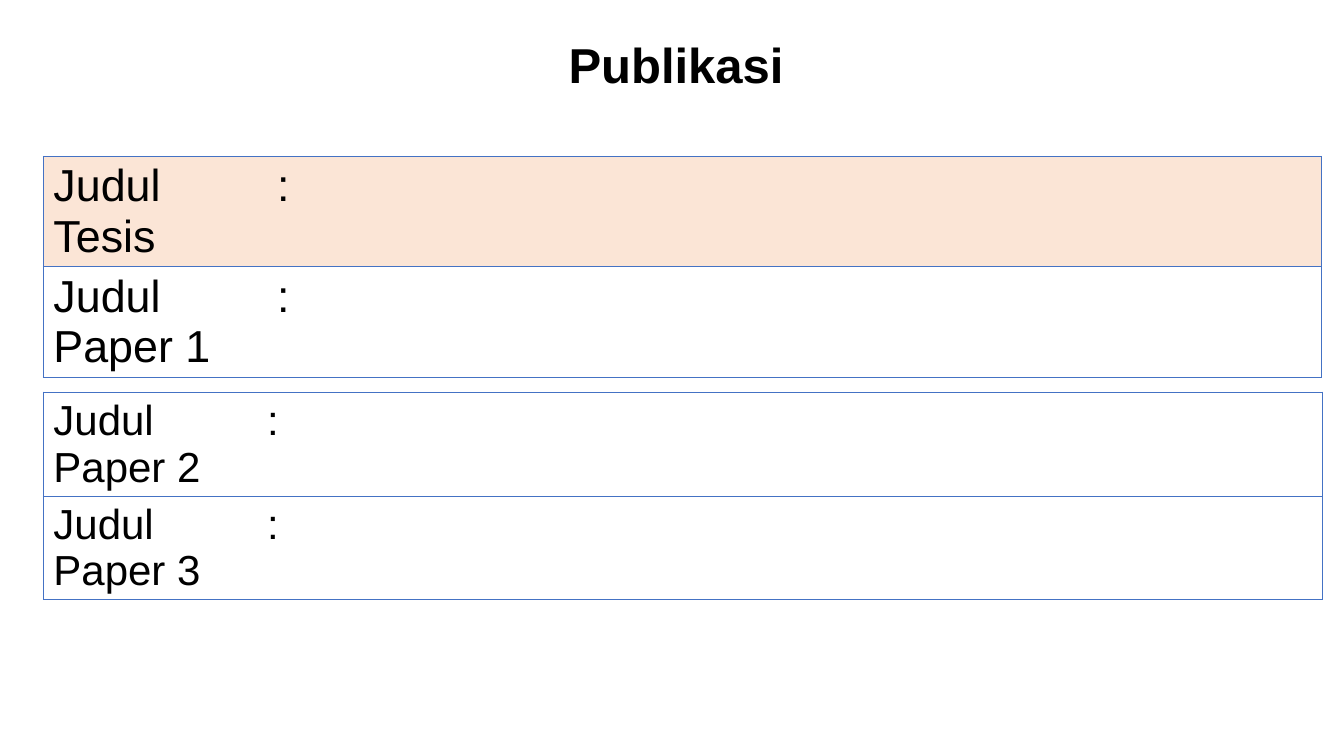
from lxml import etree
from pptx import Presentation
from pptx.dml.color import RGBColor
from pptx.enum import text
from pptx.oxml import ns
from pptx.util import Inches, Pt

FONT = "Arial"
INK, EDGE, WHITE, PEACH = "000000", "4472C4", "FFFFFF", "FBE5D6"
TITLE = "Publikasi "
LEFT = 0.43
TABLES = [
    dict(top=3.89, cols=[2.12, 0.33, 10.24], size=30, fill=WHITE,
         rows=["Judul Paper 2", "Judul Paper 3"]),
    dict(top=1.55, cols=[2.22, 0.25, 10.21], size=32, fill=PEACH,
         rows=["Judul Tesis", "Judul Paper 1"]),
]
ROW = 0.41


def rgb(code):
    return RGBColor.from_string(code)


def style(para, size, bold=False):
    font = para.font
    font.name, font.size, font.bold = FONT, Pt(size), bold
    font.color.rgb = rgb(INK)


def border(cell, sides):
    props = cell._tc.get_or_add_tcPr()
    for side in "LRTB":
        line = etree.SubElement(props, ns.qn(f"a:ln{side}"), w=str(Pt(0.75)))
        if side in sides:
            fill = etree.SubElement(line, ns.qn("a:solidFill"))
            etree.SubElement(fill, ns.qn("a:srgbClr"), val=EDGE)
        else:
            etree.SubElement(line, ns.qn("a:noFill"))


def add_list(slide, top, cols, size, fill, rows):
    frame = slide.shapes.add_table(
        len(rows), len(cols), Inches(LEFT), Inches(top),
        Inches(sum(cols)), Inches(ROW * len(rows)))
    table = frame.table
    table.first_row = table.horz_banding = False
    for col, width in zip(table.columns, cols):
        col.width = Inches(width)
    for r, label in enumerate(rows):
        for c, words in enumerate([label, ":", ""]):
            cell = table.cell(r, c)
            border(cell, "TB" + {0: "L", 2: "R"}.get(c, ""))
            if r == 0:
                cell.fill.solid()
                cell.fill.fore_color.rgb = rgb(fill)
            else:
                cell.fill.background()
            if words:
                cell.text = words
                style(cell.text_frame.paragraphs[0], size)


def main():
    deck = Presentation()
    deck.slide_width, deck.slide_height = Inches(13.33), Inches(7.5)
    slide = deck.slides.add_slide(deck.slide_layouts[5])
    title = slide.shapes.title
    title.left, title.top = Inches(2), Inches(0.32)
    title.width, title.height = Inches(9.55), Inches(0.82)
    frame = title.text_frame
    frame.text = TITLE
    frame.vertical_anchor = text.MSO_ANCHOR.TOP
    frame.margin_top = Inches(0.09)
    para = frame.paragraphs[0]
    para.alignment = text.PP_ALIGN.CENTER
    para.line_spacing = 0.9
    style(para, 35, True)
    for item in TABLES:
        add_list(slide, **item)
    deck.save("out.pptx")


if __name__ == "__main__":
    main()
